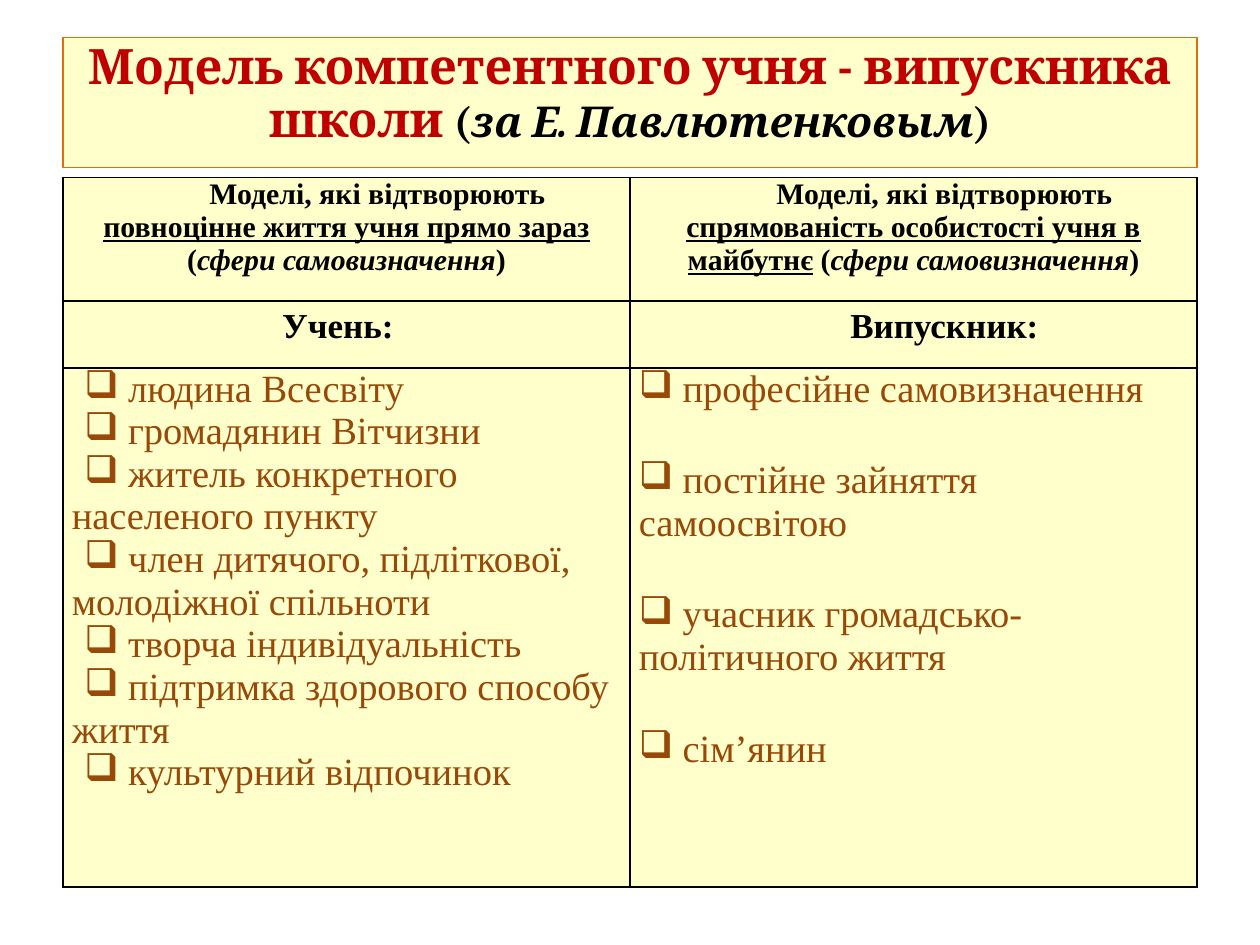
from lxml.etree import SubElement
from pptx import Presentation
from pptx.dml.color import RGBColor
from pptx.enum.text import MSO_ANCHOR as Anchor, MSO_AUTO_SIZE as AutoSize, PP_ALIGN as Align
from pptx.oxml.ns import qn
from pptx.util import Inches, Pt

CREAM, BLACK, RED, BROWN = "FFFFCC", "000000", "C00000", "984807"
SERIF = "Times New Roman"


def color(value):
    return RGBColor.from_string(value)


def format_paragraph(paragraph, size, text_color, bold, indent=0.0, bullet=None):
    """Set the first-line indent, the bullet and the font of a paragraph."""
    properties = paragraph._p.get_or_add_pPr()
    properties.set("marL", "0")
    properties.set("indent", str(Inches(indent)))
    if bullet:
        SubElement(properties, qn("a:buChar"), char=bullet)
    font = paragraph.font
    font.name, font.size, font.bold = SERIF, Pt(size), bold
    font.color.rgb = color(text_color)


presentation = Presentation()
presentation.slide_width, presentation.slide_height = Inches(10), Inches(7.5)
slide = presentation.slides.add_slide(presentation.slide_layouts[5])

# Title
title = slide.shapes.title
title.left, title.top, title.width, title.height = map(Inches, (0.5, 0.3, 9, 1.03))
title.fill.solid()
title.fill.fore_color.rgb = color(CREAM)
title.line.color.rgb = color("E46C0A")
title.line.width = Pt(0.75)
frame = title.text_frame
frame.auto_size = AutoSize.NONE
frame.vertical_anchor = Anchor.MIDDLE
frame.margin_top, frame.margin_bottom = 0, Inches(0.12)
paragraph = frame.paragraphs[0]
paragraph.alignment = Align.CENTER
paragraph.line_spacing = 0.9
paragraph.font.name, paragraph.font.bold = "Cambria", True
for text, size, text_color, italic in [
    ("Модель компетентного учня - випускника школи ", 27.9, RED, False),
    ("(", 24.3, BLACK, False),
    ("за Е. Павлютенковым", 24.3, BLACK, True),
    (")", 24.3, BLACK, False),
]:
    run = paragraph.add_run()
    run.text = text
    run.font.size, run.font.italic = Pt(size), italic
    run.font.color.rgb = color(text_color)

# Table frame
table = slide.shapes.add_table(3, 2, Inches(0.5), Inches(1.41), Inches(9), Inches(5.63)).table
for row, height in zip(table.rows, (0.98, 0.53, 4.12)):
    row.height = Inches(height)
for cell in table.iter_cells():
    cell.margin_left = cell.margin_right = Inches(0.07)
    cell.margin_top = cell.margin_bottom = 0
    cell_properties = cell._tc.get_or_add_tcPr()
    for side in ("a:lnL", "a:lnR", "a:lnT", "a:lnB"):
        line = SubElement(cell_properties, qn(side), w=str(Pt(1)))
        SubElement(SubElement(line, qn("a:solidFill")), qn("a:srgbClr"), val=BLACK)
    cell.fill.solid()
    cell.fill.fore_color.rgb = color(CREAM)

# Table content: heading, role and its alignment, list and its spacing
columns = [
    ("повноцінне життя учня прямо зараз ", "(", "Учень:", Align.LEFT, 1.67, [
        "людина Всесвіту",
        "громадянин Вітчизни",
        "житель конкретного населеного пункту",
        "член дитячого, підліткової, молодіжної спільноти",
        "творча індивідуальність",
        "підтримка здорового способу життя",
        "культурний відпочинок",
    ], " ", 0.1, 0),
    ("спрямованість особистості учня в майбутнє", " (", "Випускник:", Align.CENTER, 0.49, [
        "професійне самовизначення",
        "постійне зайняття самоосвітою",
        "учасник громадсько-політичного життя",
        "сім’янин",
    ], " ", 0, 28),
]
for column, (focus, opening, role, alignment, role_indent,
             items, gap, item_indent, space) in enumerate(columns):
    paragraph = table.cell(0, column).text_frame.paragraphs[0]
    paragraph.alignment = Align.CENTER
    format_paragraph(paragraph, 17, BLACK, True, 0.49)
    for text, underline, italic in [
        ("Моделі, які відтворюють ", False, False),
        (focus, True, False),
        (opening, False, False),
        ("сфери самовизначення", False, True),
        (")", False, False),
    ]:
        run = paragraph.add_run()
        run.text = text
        run.font.underline, run.font.italic = underline, italic

    paragraph = table.cell(1, column).text_frame.paragraphs[0]
    paragraph.text = role
    paragraph.alignment = alignment
    paragraph.line_spacing = 1.15
    format_paragraph(paragraph, 20, BLACK, True, role_indent)

    frame = table.cell(2, column).text_frame
    for index, item in enumerate(items):
        paragraph = frame.add_paragraph() if index else frame.paragraphs[0]
        paragraph.text = gap + item
        format_paragraph(paragraph, 22, BROWN, False, item_indent, "❑")
        if index:
            paragraph.space_before = Pt(space)

presentation.save("out.pptx")
